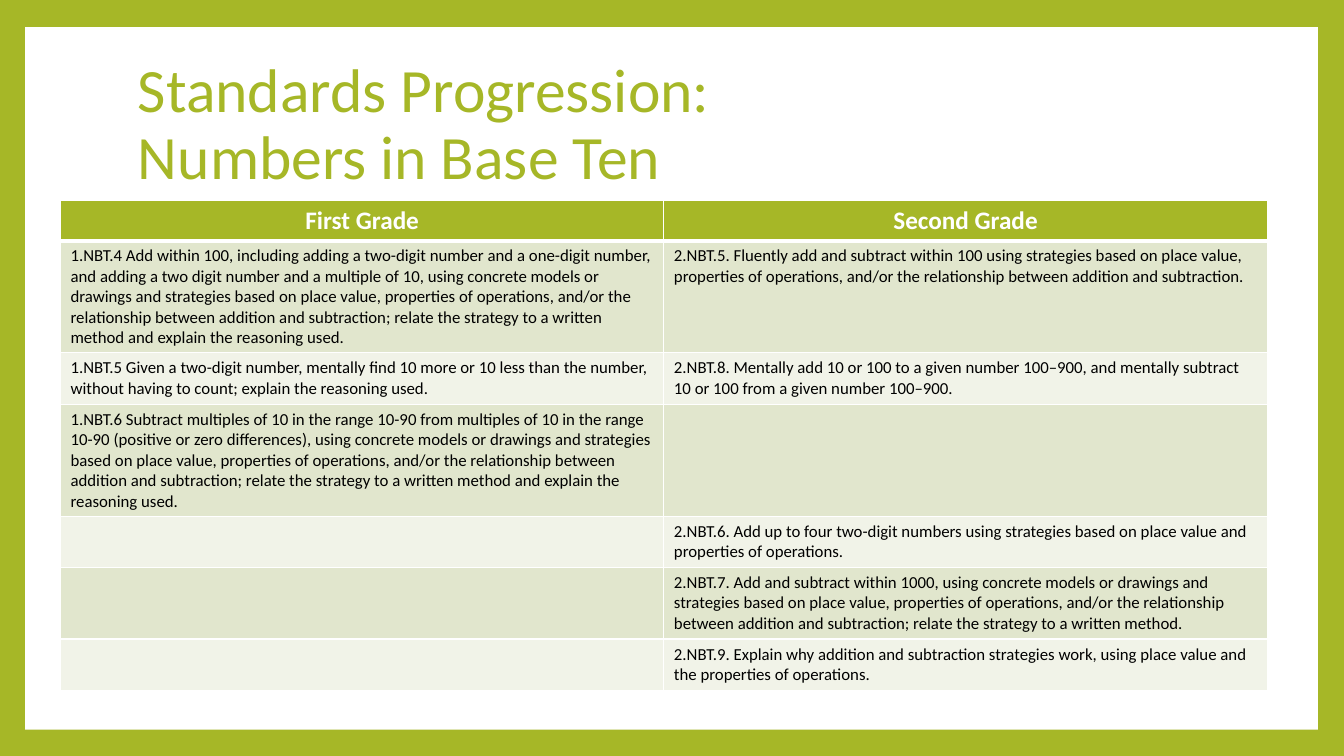
"""Build the first and second grade standards progression slide."""
from lxml.etree import SubElement
from pptx import Presentation
from pptx.dml.color import RGBColor
from pptx.enum.shapes import MSO_SHAPE
from pptx.enum.text import MSO_ANCHOR, PP_ALIGN
from pptx.oxml.ns import qn
from pptx.util import Inches, Pt

GREEN = RGBColor(0xA6, 0xB7, 0x27)
BAND_DARK = RGBColor(0xE1, 0xE6, 0xCD)
BAND_LIGHT = RGBColor(0xF1, 0xF3, 0xE8)
WHITE = RGBColor(0xFF, 0xFF, 0xFF)
BLACK = RGBColor(0, 0, 0)

TITLE = {"size": Pt(44), "bold": False}
HEADER = {"size": Pt(18), "bold": True}
BODY = {"size": Pt(12), "bold": False}

ROW_HEIGHTS = [0.4, 1.11, 0.51, 1.11, 0.51, 0.71, 0.51]
STANDARDS = [
    ("First Grade", "Second Grade"),
    ("1.NBT.4 Add within 100, including adding a two-digit number and a one-digit number, "
     "and adding a two digit number and a multiple of 10, using concrete models or drawings "
     "and strategies based on place value, properties of operations, and/or the relationship "
     "between addition and subtraction; relate the strategy to a written method and explain "
     "the reasoning used.",
     "2.NBT.5. Fluently add and subtract within 100 using strategies based on place value, "
     "properties of operations, and/or the relationship between addition and subtraction."),
    ("1.NBT.5 Given a two-digit number, mentally find 10 more or 10 less than the number, "
     "without having to count; explain the reasoning used.",
     "2.NBT.8. Mentally add 10 or 100 to a given number 100–900, and mentally subtract "
     "10 or 100 from a given number 100–900."),
    ("1.NBT.6 Subtract multiples of 10 in the range 10-90 from multiples of 10 in the range "
     "10-90 (positive or zero differences), using concrete models or drawings and strategies "
     "based on place value, properties of operations, and/or the relationship between addition "
     "and subtraction; relate the strategy to a written method and explain the reasoning used.",
     ""),
    ("", "2.NBT.6. Add up to four two-digit numbers using strategies based on place value and "
     "properties of operations."),
    ("", "2.NBT.7. Add and subtract within 1000, using concrete models or drawings and "
     "strategies based on place value, properties of operations, and/or the relationship "
     "between addition and subtraction; relate the strategy to a written method."),
    ("", "2.NBT.9. Explain why addition and subtraction strategies work, using place value and "
     "the properties of operations."),
]


class SlideBuilder:
    """Holds the font and the current slide."""

    def __init__(self, slide, font="Calibri"):
        self.slide = slide
        self.font = font

    def background(self, color):
        fill = self.slide.background.fill
        fill.solid()
        fill.fore_color.rgb = color

    def panel(self, x, y, w, h, color):
        sp = self.slide.shapes.add_shape(
            MSO_SHAPE.RECTANGLE, Inches(x), Inches(y), Inches(w), Inches(h))
        sp.shadow.inherit = False
        sp.fill.solid()
        sp.fill.fore_color.rgb = color
        sp.line.fill.background()

    def set_text(self, p, text, style, color):
        p.text = text
        for r in p.runs:
            for name, value in {"name": self.font, **style}.items():
                setattr(r.font, name, value)
            r.font.color.rgb = color

    def title(self, x, y, w, h, text):
        tf = self.slide.shapes.add_textbox(
            Inches(x), Inches(y), Inches(w), Inches(h)).text_frame
        tf.word_wrap = True
        tf.vertical_anchor = MSO_ANCHOR.MIDDLE
        p = tf.paragraphs[0]
        p.line_spacing = 0.9
        self.set_text(p, text, TITLE, GREEN)

    def borders(self, cell, widths):
        tcPr = cell._tc.get_or_add_tcPr()
        for side, width in widths.items():
            ln = SubElement(tcPr, qn(f"a:ln{side}"), w=str(Pt(width)))
            fill = SubElement(ln, qn("a:solidFill"))
            SubElement(fill, qn("a:srgbClr"), val=str(WHITE))

    def table(self, x, y, w, rows, heights):
        cols = len(rows[0])
        table = self.slide.shapes.add_table(
            len(rows), cols, Inches(x), Inches(y), Inches(w), Inches(sum(heights))).table
        for i, (texts, height) in enumerate(zip(rows, heights)):
            table.rows[i].height = Inches(height)
            head = i == 0
            band = GREEN if head else BAND_DARK if i % 2 else BAND_LIGHT
            widths = {"L": 1, "R": 1, "T": 3 if i == 1 else 1, "B": 3 if head else 1}
            for j, text in enumerate(texts):
                cell = table.cell(i, j)
                self.borders(cell, widths)
                cell.fill.solid()
                cell.fill.fore_color.rgb = band
                p = cell.text_frame.paragraphs[0]
                p.alignment = PP_ALIGN.CENTER if head else PP_ALIGN.LEFT
                if text:
                    self.set_text(p, text, HEADER if head else BODY, WHITE if head else BLACK)


def main():
    prs = Presentation()
    prs.slide_width, prs.slide_height = Inches(13.33), Inches(7.5)
    s = SlideBuilder(prs.slides.add_slide(prs.slide_layouts[6]))
    s.background(GREEN)
    s.panel(0.25, 0.27, 12.82, 6.97, WHITE)
    s.title(1.27, 0.51, 10.8, 1.48, "Standards Progression:\vNumbers in Base Ten")
    s.table(0.6, 1.99, 11.97, STANDARDS, ROW_HEIGHTS)
    prs.save("out.pptx")


if __name__ == "__main__":
    main()
